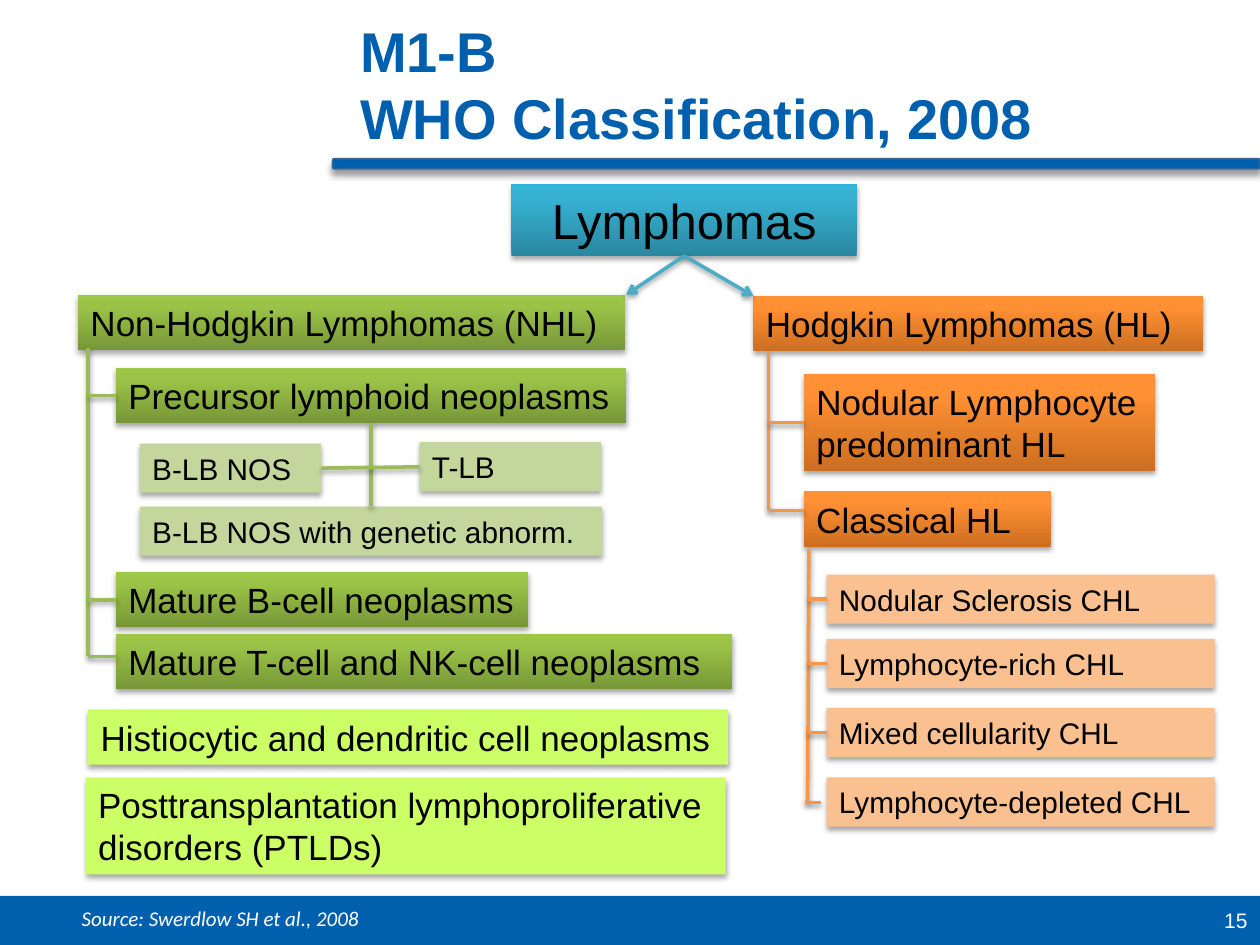
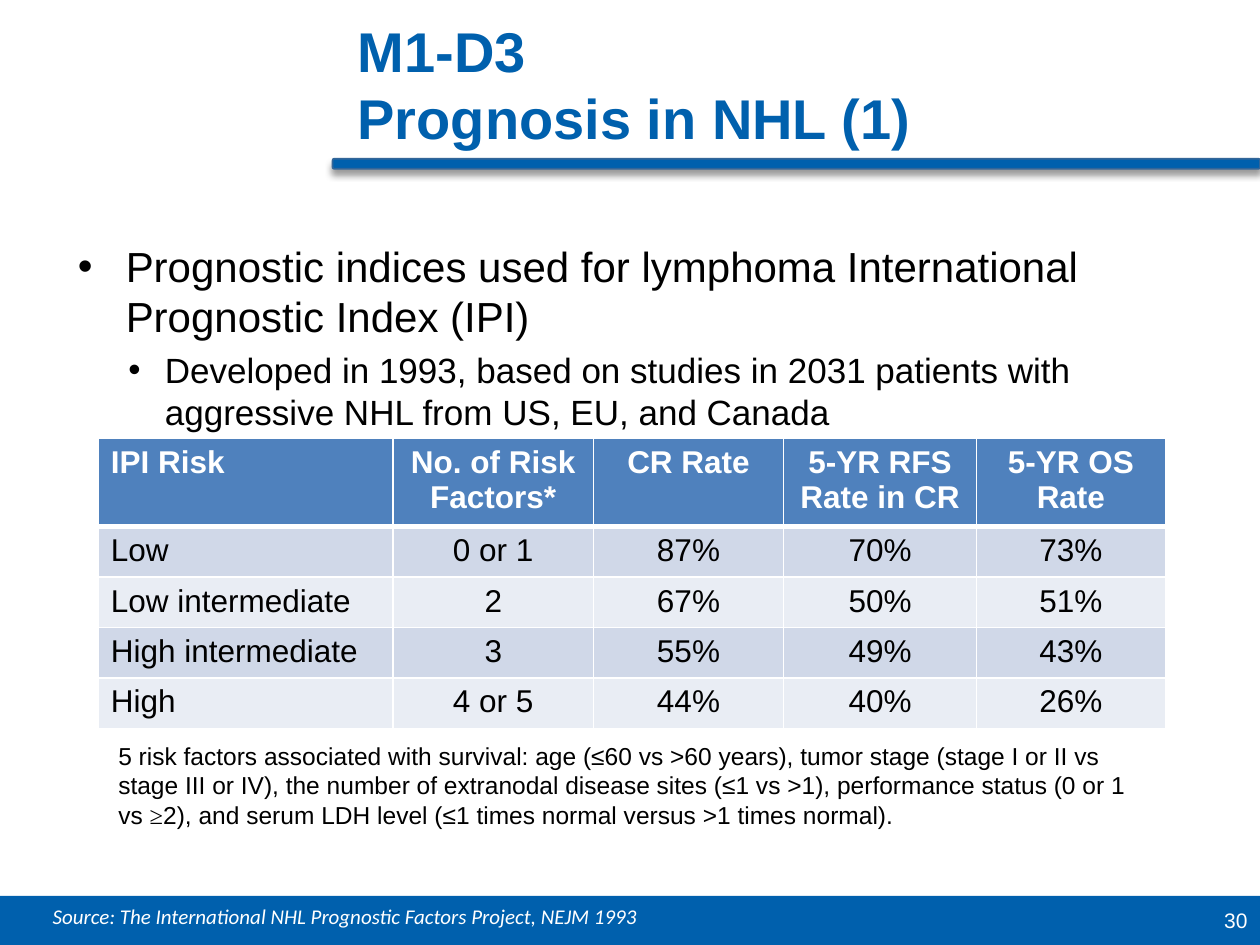
from copy import deepcopy
from dataclasses import dataclass

from lxml.etree import SubElement
from pptx import Presentation
from pptx.dml.color import RGBColor
from pptx.enum.shapes import MSO_CONNECTOR as Connector, MSO_SHAPE as Preset
from pptx.enum.text import MSO_ANCHOR as Anchor, PP_ALIGN as Align
from pptx.oxml.ns import qn
from pptx.util import Inches, Pt

TOP, LEFT, BOTTOM, RIGHT = range(4)


@dataclass(frozen=True)
class Theme:
    blue: str = "0060AD"
    rule_edge: str = "336699"
    black: str = "000000"
    white: str = "FFFFFF"
    root_line: str = "4BACC6"
    nhl_line: str = "9BBB59"
    hl_line: str = "F79646"
    # A tuple of three colours is a gradient running from bottom to top.
    root: tuple = ("2A88A2", "37B1D2", "34B4D6")
    nhl: tuple = ("779737", "9BC348", "9DC746")
    hl: tuple = ("CC6E20", "FF9034", "FF9136")
    other: str = "CCFF66"
    nhl_subtype: str = "C3D69B"
    hl_subtype: str = "FAC090"
    table_header: str = "4F81BD"
    table_rows: tuple = ("D0D8E8", "E9EDF4")


THEME = Theme()
TITLE = {"name": "Arial", "size": 32, "bold": True, "color": THEME.blue}
ROOT = {"name": "Arial", "size": 28, "color": THEME.black}
BODY = {**ROOT, "size": 24}
GROUP = {**ROOT, "size": 20}
CELL = {**ROOT, "size": 18, "bold": False}
HEADER_CELL = {**CELL, "bold": True, "color": THEME.white}
SUBTYPE = {**ROOT, "size": 17}
NOTE = {**ROOT, "size": 14}
PAGE_NUMBER = {"name": "Arial", "size": 12, "color": THEME.white}
SOURCE = {**PAGE_NUMBER, "name": "Calibri", "italic": True}


def rgb(value):
    return RGBColor.from_string(value)


def set_font(font, values):
    for key, value in values.items():
        if key == "color":
            font.color.rgb = rgb(value)
        else:
            setattr(font, key, Pt(value) if key == "size" else value)


def place(left, top, width, height):
    return [Inches(value) for value in (left, top, width, height)]


def add_shadow(shape, opacity, blur, distance):
    """Drop a black shadow straight down; call after fill and line are set."""
    effects = SubElement(shape._element.spPr, qn("a:effectLst"))
    shadow = SubElement(effects, qn("a:outerShdw"), {
        "blurRad": str(Pt(blur)), "dist": str(Pt(distance)),
        "dir": "5400000", "rotWithShape": "0"})
    color = SubElement(shadow, qn("a:srgbClr"), val=THEME.black)
    SubElement(color, qn("a:alpha"), val=str(opacity * 1000))


def set_fill(shape, color):
    if isinstance(color, str):
        shape.fill.solid()
        shape.fill.fore_color.rgb = rgb(color)
        return
    shape.fill.gradient()
    shape.fill.gradient_angle = 90
    stop_list = shape._element.spPr.find(".//" + qn("a:gsLst"))
    stop_list.append(deepcopy(stop_list[-1]))
    for stop, value, position in zip(shape.fill.gradient_stops, color, (0, 0.8, 1)):
        stop.color.rgb = rgb(value)
        stop.position = position


def add_block(slide, area, color, preset=Preset.RECTANGLE, edge=None):
    block = slide.shapes.add_shape(preset, *place(*area))
    set_fill(block, color)
    if edge:
        block.line.color.rgb = rgb(edge)
        block.line.width = Pt(1)
    else:
        block.line.fill.background()
    return block


def write(text_frame, text, font, align=Align.LEFT, anchor=Anchor.TOP):
    text_frame.word_wrap = True
    text_frame.vertical_anchor = anchor
    text_frame.text = text
    paragraph = text_frame.paragraphs[0]
    paragraph.alignment = align
    for run in paragraph.runs:
        set_font(run.font, font)
    return paragraph


def add_text(slide, area, text, font, **layout):
    box = slide.shapes.add_textbox(*place(*area))
    return write(box.text_frame, text, font, **layout)


def add_box(slide, area, text, color, font, align=Align.LEFT):
    box = add_block(slide, area, color)
    add_shadow(box, 35, 3.1, 1.8)
    write(box.text_frame, text, font, align, Anchor.MIDDLE)
    return box


def add_link(slide, color, start, end, begin=None, finish=None, arrow=False):
    """Draw a line; begin and finish are optional (box, side) joints."""
    points = [Inches(value) for value in (*start, *end)]
    link = slide.shapes.add_connector(Connector.STRAIGHT, *points)
    link.line.color.rgb = rgb(color)
    link.line.width = Pt(2)
    if begin:
        link.begin_connect(*begin)
    if finish:
        link.end_connect(*finish)
    if arrow:
        SubElement(link.line._get_or_add_ln(), qn("a:tailEnd"), type="arrow")
    add_shadow(link, 38, 3.1, 1.6)


def add_branch(slide, color, trunk, box):
    """Join a vertical trunk at x to the middle of a box's left side."""
    middle = (box.top + box.height / 2) / Inches(1)
    add_link(slide, color, (trunk, middle), (box.left / Inches(1), middle),
             finish=(box, LEFT))


def add_bullet(paragraph, text, font, left, hanging):
    properties = paragraph._p.get_or_add_pPr()
    properties.set("marL", str(Inches(left)))
    properties.set("indent", str(-Inches(hanging)))
    SubElement(properties, qn("a:buFont"), typeface="Arial")
    SubElement(properties, qn("a:buChar"), char="•")
    run = paragraph.add_run()
    run.text = text
    set_font(run.font, font)


def set_borders(cell, bottom):
    properties = cell._tc.get_or_add_tcPr()
    for side, width in (("L", 1), ("R", 1), ("T", 1), ("B", bottom)):
        line = SubElement(properties, qn(f"a:ln{side}"), w=str(Pt(width)))
        fill = SubElement(line, qn("a:solidFill"))
        SubElement(fill, qn("a:srgbClr"), val=THEME.white)


def add_table(slide, area, widths, rows):
    table = slide.shapes.add_table(len(rows), len(widths), *place(*area)).table
    for column, width in zip(table.columns, widths):
        column.width = Inches(width)
    for row_index, values in enumerate(rows):
        header = row_index == 0
        table.rows[row_index].height = Inches(0.67 if header else 0.4)
        color = THEME.table_header if header else THEME.table_rows[(row_index - 1) % 2]
        for column_index, value in enumerate(values):
            cell = table.cell(row_index, column_index)
            set_borders(cell, 3 if header else 1)
            cell.fill.solid()
            cell.fill.fore_color.rgb = rgb(color)
            write(cell.text_frame, value, HEADER_CELL if header else CELL,
                  Align.CENTER if column_index else Align.LEFT)


def add_page(presentation, title, title_left, number, source, source_at):
    """Add a slide with the shared title, rule and footer band."""
    slide = presentation.slides.add_slide(presentation.slide_layouts[6])
    add_block(slide, (0, 7.11, 10, 0.39), THEME.blue).shadow.inherit = False
    add_text(slide, (7.67, 7.11, 2.33, 0.39), number, PAGE_NUMBER,
             align=Align.RIGHT, anchor=Anchor.MIDDLE)
    rule = add_block(slide, (2.64, 1.26, 7.36, 0.08), THEME.blue,
                     Preset.ROUNDED_RECTANGLE, THEME.rule_edge)
    add_shadow(rule, 40, 4, 3)
    add_text(slide, (title_left, 0.17, 10 - title_left, 0.99), title, TITLE,
             anchor=Anchor.MIDDLE)
    add_text(slide, (*source_at, 8.6, 0.3), source, SOURCE)
    return slide


def add_nhl_tree(slide):
    def group(area, text):
        return add_box(slide, area, text, THEME.nhl, GROUP)

    def subtype(area, text):
        return add_box(slide, area, text, THEME.nhl_subtype, SUBTYPE)

    line, trunk = THEME.nhl_line, 0.7
    group((0.62, 2.34, 4.34, 0.44), "Non-Hodgkin Lymphomas (NHL)")
    precursor = group((0.92, 2.92, 4.05, 0.44), "Precursor lymphoid neoplasms")
    mature_b = group((0.92, 4.54, 3.27, 0.44), "Mature B-cell neoplasms")
    group((0.92, 5.03, 4.89, 0.44), "Mature T-cell and NK-cell neoplasms")
    b_lb = subtype((1.11, 3.52, 1.44, 0.39), "B-LB NOS")
    t_lb = subtype((3.33, 3.51, 1.44, 0.39), "T-LB")
    genetic = subtype((1.11, 4.02, 3.67, 0.39), "B-LB NOS with genetic abnorm.")

    add_link(slide, line, (trunk, 2.76), (trunk, 5.21))
    for box in (precursor, mature_b):
        add_branch(slide, line, trunk, box)
    add_link(slide, line, (trunk, 5.21), (0.92, 5.21))
    add_link(slide, line, (2.94, 3.36), (2.94, 4.02), (precursor, BOTTOM), (genetic, TOP))
    add_link(slide, line, (3.33, 3.71), (2.55, 3.71), (t_lb, LEFT), (b_lb, RIGHT))


def add_hl_tree(slide):
    def group(area, text):
        return add_box(slide, area, text, THEME.hl, GROUP)

    line, trunk = THEME.hl_line, 6.1
    group((5.98, 2.35, 3.57, 0.44), "Hodgkin Lymphomas (HL)")
    nodular = group((6.38, 2.97, 2.79, 0.77), "Nodular Lymphocyte predominant HL")
    group((6.38, 3.9, 1.96, 0.44), "Classical HL")
    add_link(slide, line, (trunk, 2.79), (trunk, 4.05))
    add_branch(slide, line, trunk, nodular)
    add_link(slide, line, (trunk, 4.05), (6.38, 4.05))

    subtypes = [add_box(slide, (6.56, top, 3.08, 0.39), text, THEME.hl_subtype, SUBTYPE)
                for top, text in ((4.56, "Nodular Sclerosis CHL"),
                                  (5.07, "Lymphocyte-rich CHL"),
                                  (5.62, "Mixed cellularity CHL"),
                                  (6.17, "Lymphocyte-depleted CHL"))]
    add_link(slide, line, (6.42, 4.36), (6.41, 6.37))
    for box in subtypes[:-1]:
        add_branch(slide, line, 6.41, box)
    add_link(slide, line, (6.39, 6.37), (6.52, 6.37))


def build_classification(presentation):
    slide = add_page(presentation, "M1-B\vWHO Classification, 2008", 2.76, "15",
                     "Source: Swerdlow SH et al., 2008", (0.55, 7.14))
    root = add_box(slide, (4.06, 1.46, 2.74, 0.57), "Lymphomas", THEME.root, ROOT,
                   Align.CENTER)
    add_nhl_tree(slide)
    add_hl_tree(slide)
    for end in ((4.97, 2.34), (5.98, 2.35)):
        add_link(slide, THEME.root_line, (5.43, 2.03), end, (root, BOTTOM), arrow=True)
    add_box(slide, (0.7, 5.63, 5.08, 0.44), "Histiocytic and dendritic cell neoplasms",
            THEME.other, GROUP)
    add_box(slide, (0.68, 6.17, 5.08, 0.77),
            "Posttransplantation lymphoproliferative disorders (PTLDs)",
            THEME.other, GROUP)


def build_prognosis(presentation):
    slide = add_page(presentation, "M1-D3\vPrognosis in NHL (1)", 2.74, "30",
                     "Source: The International NHL Prognostic Factors Project, NEJM 1993",
                     (0.32, 7.12))
    frame = slide.shapes.add_textbox(*place(0.52, 1.86, 8.97, 1.6)).text_frame
    frame.word_wrap = True
    add_bullet(frame.paragraphs[0], "Prognostic indices used for lymphoma "
               "International Prognostic Index (IPI)", BODY, 0.38, 0.38)
    detail = frame.add_paragraph()
    detail.level = 1
    detail.space_before = Pt(4)
    add_bullet(detail, "Developed in 1993, based on studies in 2031 patients with "
               "aggressive NHL from US, EU, and Canada", GROUP, 0.69, 0.29)

    add_table(slide, (0.78, 3.48, 8.47, 2.27), (2.34, 1.59, 1.51, 1.53, 1.5), (
        ("IPI Risk", "No. of Risk Factors*", "CR Rate", "5-YR RFS Rate in CR",
         "5-YR OS Rate"),
        ("Low", "0 or 1", "87%", "70%", "73%"),
        ("Low intermediate", "2", "67%", "50%", "51%"),
        ("High intermediate", "3", "55%", "49%", "43%"),
        ("High", "4 or 5", "44%", "40%", "26%")))

    note = add_text(slide, (0.84, 5.83, 8.42, 0.81),
                    "5 risk factors associated with survival: age (≤60 vs >60 years), "
                    "tumor stage (stage I or II vs stage III or IV), the number of "
                    "extranodal disease sites (≤1 vs >1), performance status (0 or 1 vs ",
                    NOTE)
    for text, name in (("≥", "Times New Roman"),
                       ("2), and serum LDH level (≤1 times normal versus "
                        ">1 times normal).", "Arial")):
        run = note.add_run()
        run.text = text
        set_font(run.font, {**NOTE, "name": name})


def main():
    presentation = Presentation()
    presentation.slide_width = Inches(10)
    presentation.slide_height = Inches(7.5)
    build_classification(presentation)
    build_prognosis(presentation)
    presentation.save("out.pptx")


if __name__ == "__main__":
    main()
